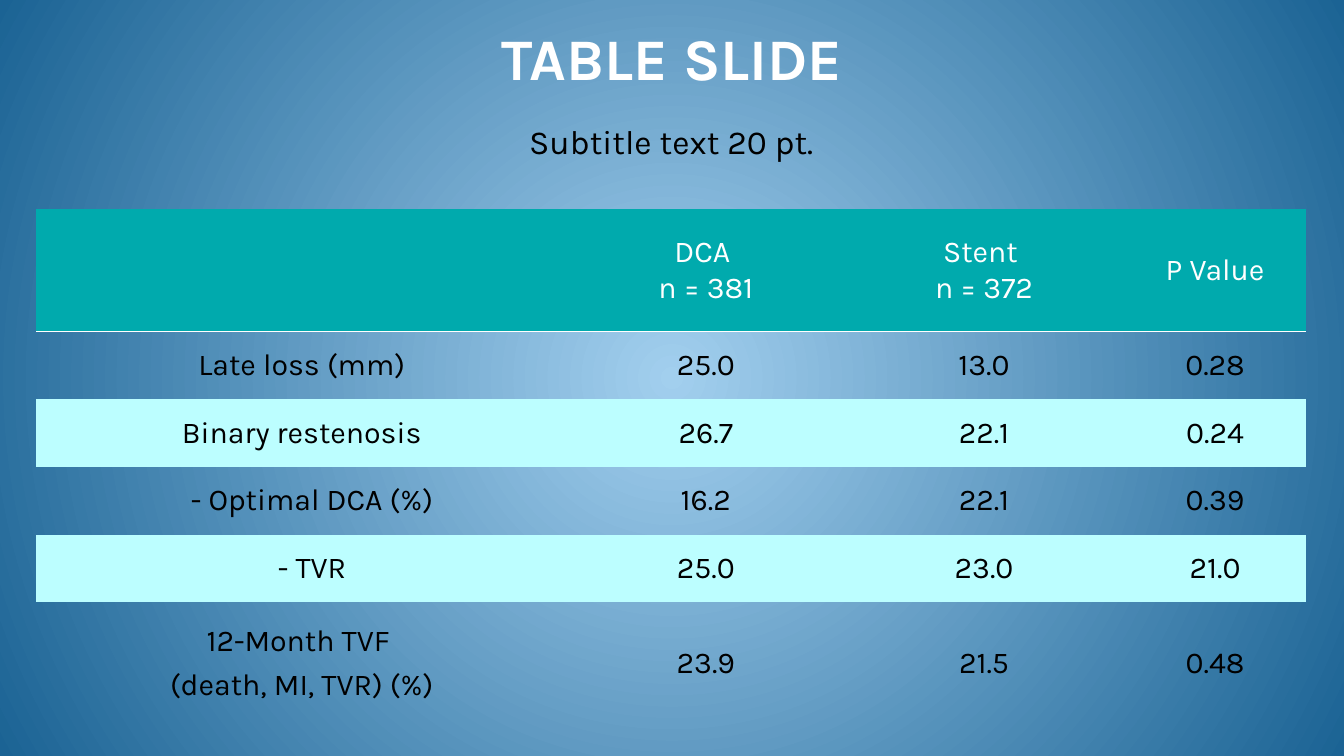
"""Build a slide with a title, a subtitle and a table of clinical results."""
from lxml import etree
from pptx import Presentation
from pptx.dml.color import RGBColor
from pptx.enum import text
from pptx.oxml import ns, parse_xml
from pptx.util import Inches, Pt

COLORS = {
    "white": "FFFFFF",
    "black": "000000",
    "header": "00AAAD",
    "band": "BCFEFF",
    "glow": "A2CFEE",
    "edge": "1B6394",
}
FONT = "Karla"
NO_STYLE = "{2D5ABB26-0587-4C30-8999-92F81FD0307C}"
COLUMN_WIDTHS = [4.39, 2.29, 2.31, 1.51]
ROW_HEIGHTS = [1.01, 0.56, 0.56, 0.56, 0.56, 1.01]
RESULTS = [
    ["", "DCA \vn = 381", "Stent \vn = 372", "P Value"],
    ["Late loss (mm)", "25.0", "13.0", "0.28"],
    ["Binary restenosis", "26.7", "22.1", "0.24"],
    ["- Optimal DCA (%)", "16.2", "22.1", "0.39"],
    ["- TVR", "25.0", "23.0", "21.0"],
    ["12-Month TVF \n(death, MI, TVR) (%)", "23.9", "21.5", "0.48"],
]


def rgb(name):
    return RGBColor.from_string(COLORS[name])


def format_text(frame, size, color, bold=False):
    for paragraph in frame.paragraphs:
        paragraph.alignment = text.PP_ALIGN.CENTER
        font = paragraph.font
        font.name, font.size, font.bold = FONT, Pt(size), bold
        font.color.rgb = rgb(color)
        for run in paragraph.runs:
            run.font.name, run.font.size, run.font.bold = FONT, Pt(size), bold
            run.font.color.rgb = rgb(color)


def paint_background(slide):
    fill = slide.background.fill
    fill.gradient()
    for stop, color in zip(fill.gradient_stops, ("glow", "edge")):
        stop.color.rgb = rgb(color)
    gradient = slide.element.find(".//" + ns.qn("a:gradFill"))
    gradient.remove(gradient.find(ns.qn("a:lin")))
    gradient.append(parse_xml(
        f'<a:path {ns.nsdecls("a")} path="circle">'
        '<a:fillToRect l="50000" t="50000" r="50000" b="50000"/></a:path>'))


def add_heading(slide, wording, place, size, color, bold=False):
    frame = slide.shapes.add_textbox(*map(Inches, place)).text_frame
    frame.word_wrap = True
    frame.text = wording
    format_text(frame, size, color, bold)
    frame.paragraphs[0].line_spacing = 0.9
    return frame


def add_bottom_border(cell, color):
    line = parse_xml(f'<a:lnB {ns.nsdecls("a")} w="{Pt(1)}"/>')
    solid = etree.SubElement(line, ns.qn("a:solidFill"))
    etree.SubElement(solid, ns.qn("a:srgbClr"), val=COLORS[color])
    cell._tc.get_or_add_tcPr().insert(0, line)


def fill_cell(cell, wording, row):
    cell.vertical_anchor = text.MSO_ANCHOR.MIDDLE
    indent = 0.17 if wording.startswith("-") else 0
    cell.margin_left, cell.margin_right = Inches(0.11 + indent), Inches(0.11)
    cell.margin_top = cell.margin_bottom = Inches(0.06)
    cell.text_frame.text = wording
    format_text(cell.text_frame, 18, "black" if row else "white")
    for paragraph in cell.text_frame.paragraphs[1:]:
        paragraph.space_before = Pt(5.4)
    if row % 2 and row:
        cell.fill.background()
    elif row in (0, 2, 4):
        cell.fill.solid()
        cell.fill.fore_color.rgb = rgb("band" if row else "header")
    if row == 0:
        add_bottom_border(cell, "white")


def add_results(slide):
    place = map(Inches, (0.3, 1.73, sum(COLUMN_WIDTHS), sum(ROW_HEIGHTS)))
    frame = slide.shapes.add_table(len(RESULTS), len(COLUMN_WIDTHS), *place)
    table = frame.table
    table.horz_banding = False
    frame._element.find(".//" + ns.qn("a:tableStyleId")).text = NO_STYLE
    for column, width in zip(table.columns, COLUMN_WIDTHS):
        column.width = Inches(width)
    for row, height in enumerate(ROW_HEIGHTS):
        table.rows[row].height = Inches(height)
        for column, wording in enumerate(RESULTS[row]):
            fill_cell(table.cell(row, column), wording, row)


def main():
    deck = Presentation()
    deck.slide_width, deck.slide_height = Inches(11.11), Inches(6.25)
    slide = deck.slides.add_slide(deck.slide_layouts[6])
    paint_background(slide)
    title = add_heading(slide, "TABLE SLIDE", (0, 0.21, 11.11, 0.59), 35, "white", bold=True)
    title.vertical_anchor = text.MSO_ANCHOR.MIDDLE
    title.margin_left = title.margin_right = Inches(0.05)
    add_heading(slide, "Subtitle text 20 pt.", (0.3, 0.99, 10.5, 4.81), 20, "black")
    add_results(slide)
    deck.save("out.pptx")


if __name__ == "__main__":
    main()
